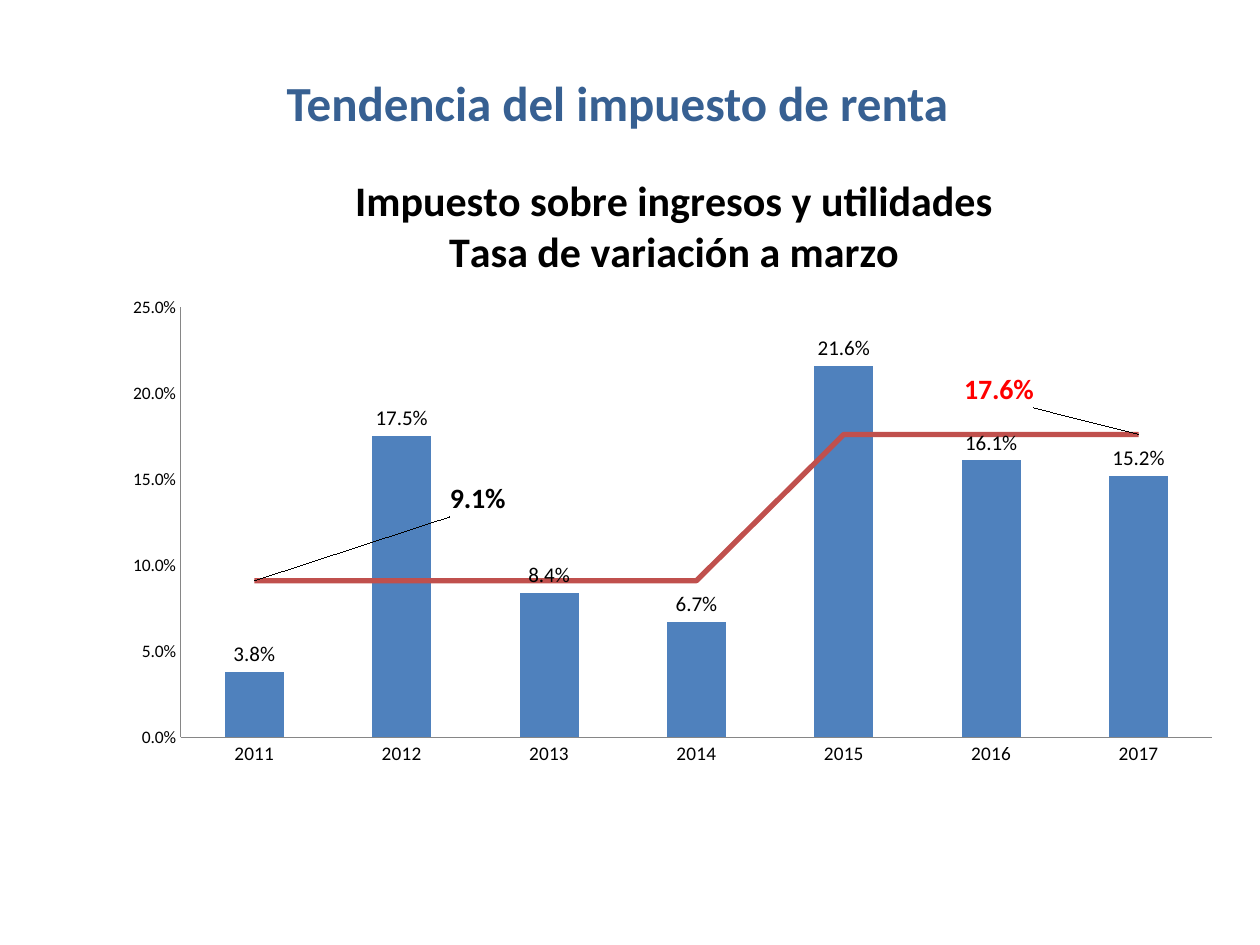
from copy import deepcopy

from pptx import Presentation
from pptx.chart.data import CategoryChartData
from pptx.dml.color import RGBColor
from pptx.enum.chart import (XL_CHART_TYPE, XL_LABEL_POSITION,
                             XL_MARKER_STYLE, XL_TICK_MARK)
from pptx.enum.text import MSO_AUTO_SIZE, PP_ALIGN
from pptx.oxml import parse_xml
from pptx.oxml.ns import nsdecls, qn
from pptx.util import Inches, Pt

COLUMN = XL_CHART_TYPE.COLUMN_CLUSTERED
OUTER = XL_LABEL_POSITION.OUTSIDE_END
RIGHT = XL_LABEL_POSITION.RIGHT
NO_MARK = XL_MARKER_STYLE.NONE
NO_TICK = XL_TICK_MARK.NONE
CENTER = PP_ALIGN.CENTER
GROW = MSO_AUTO_SIZE.SHAPE_TO_FIT_TEXT

BLUE, RED, NAVY = "4F81BD", "C0504D", "376092"
BLACK, GRAY, ALERT = "000000", "868686", "FF0000"
PERCENT = "0.0%"

YEARS = [str(year) for year in range(2011, 2018)]
RATES = [0.038, 0.175, 0.084, 0.067, 0.216, 0.161, 0.152]
MEANS = [0.091] * 4 + [0.176] * 3
# Point, colour, and label shift as shares of the chart
NOTES = [(0, BLACK, 0.17, -0.13), (6, ALERT, -0.16, -0.07)]

LEADERS = (
    f'<c:extLst {nsdecls("c")}><c:ext uri="{{CE6537A1-D6FC-4f65-9D91-7224C49458BB}}" '
    'xmlns:c15="http://schemas.microsoft.com/office/drawing/2012/chart">'
    '<c15:showLeaderLines val="1"/></c:ext></c:extLst>')


def color(code):
    return RGBColor.from_string(code)


def layout(x, y, extra=""):
    return parse_xml(
        f'<c:layout {nsdecls("c")}><c:manualLayout>{extra}'
        f'<c:x val="{x}"/><c:y val="{y}"/></c:manualLayout></c:layout>')


class Page:
    """Keeps the style and the current slide; places are shares of its size."""

    def __init__(self, deck, face="Calibri"):
        self.deck, self.face = deck, face
        self.slide = deck.slides.add_slide(deck.slide_layouts[6])

    def box(self, x, y, w, h):
        wide, high = self.deck.slide_width, self.deck.slide_height
        return int(x * wide), int(y * high), int(w * wide), int(h * high)

    def style(self, font, size, code=BLACK, bold=False):
        font.name, font.size, font.bold = self.face, Pt(size), bold
        font.color.rgb = color(code)

    def text(self, words, place, size, code):
        frame = self.slide.shapes.add_textbox(*self.box(*place)).text_frame
        frame.word_wrap, frame.auto_size = True, GROW
        para = frame.paragraphs[0]
        para.text, para.alignment = words, CENTER
        self.style(para.font, size, code, True)

    def chart(self, place, title):
        data = CategoryChartData(number_format=PERCENT)
        data.categories = YEARS
        data.add_series("Series 1", RATES)
        data.add_series("Series 2", MEANS)
        chart = self.slide.shapes.add_chart(
            COLUMN, *self.box(*place), data).chart
        self.style(chart.font, 10)
        chart.has_legend = False
        chart.has_title = True
        frame = chart.chart_title.text_frame
        frame.text = title
        for para in frame.paragraphs:
            self.style(para.font, 24, bold=True)
        chart.chart_title.include_in_layout = False
        self.axis(chart.category_axis, 11)
        self.axis(chart.value_axis, 10)
        scale = chart.value_axis
        scale.minimum_scale, scale.maximum_scale = 0, 0.25
        scale.major_unit = 0.05
        scale.tick_labels.number_format = PERCENT
        scale.tick_labels.number_format_is_linked = False
        self.bars(chart.plots[0])
        self.trend(chart)
        return chart

    def axis(self, axis, size):
        axis.has_major_gridlines = False
        axis.major_tick_mark = axis.minor_tick_mark = NO_TICK
        axis.format.line.color.rgb = color(GRAY)
        self.style(axis.tick_labels.font, size)

    def bars(self, plot):
        plot.gap_width, plot.vary_by_categories = 150, False
        bars = plot.series[0]
        bars.format.fill.solid()
        bars.format.fill.fore_color.rgb = color(BLUE)
        tags = bars.data_labels
        tags.show_value, tags.position = True, OUTER
        self.style(tags.font, 12)

    def trend(self, chart):
        # Move the second series to a line plot on the same axes
        group = chart.plots[0]._element
        ser = group.findall(qn("c:ser"))[1]
        for flag in ser.findall(qn("c:invertIfNegative")):
            ser.remove(flag)
        line = parse_xml(
            f'<c:lineChart {nsdecls("c")}><c:grouping val="standard"/>'
            '<c:varyColors val="0"/><c:marker val="1"/></c:lineChart>')
        line.insert(2, ser)
        for axis in group.findall(qn("c:axId")):
            line.append(deepcopy(axis))
        group.addnext(line)

        means = chart.plots[1].series[0]
        means.smooth, means.marker.style = False, NO_MARK
        means.format.line.color.rgb = color(RED)
        means.format.line.width = Pt(3)
        # Label two points, each tied to its place by a leader line
        means.data_labels.show_value = False
        tags = ser.find(qn("c:dLbls"))
        for index, code, x, y in NOTES:
            tag = means.points[index].data_label
            self.style(tag.font, 16, code, True)
            tag.position = RIGHT
            tags.findall(qn("c:dLbl"))[-1].insert(1, layout(x, y))
        tags.append(parse_xml(LEADERS))

    def frame(self, chart, x, y, w, h):
        """Set the inner plot area as shares of the chart."""
        area = chart.plots[0]._element.getparent()
        for old in area.findall(qn("c:layout")):
            area.remove(old)
        spot = layout(x, y, '<c:layoutTarget val="inner"/>'
                      '<c:xMode val="edge"/><c:yMode val="edge"/>')
        for name, share in (("w", w), ("h", h)):
            spot[0].append(parse_xml(
                f'<c:{name} {nsdecls("c")} val="{share}"/>'))
        area.insert(0, spot)


def main():
    deck = Presentation()
    deck.slide_width, deck.slide_height = Inches(10), Inches(7.5)
    page = Page(deck)
    # Bars by year with the mean of each period
    chart = page.chart(
        (0.09, 0.16, 0.89, 0.66),
        "Impuesto sobre ingresos y utilidades\nTasa de variación a marzo")
    page.frame(chart, 0.06, 0.25, 0.92, 0.69)
    # Slide heading
    page.text("Tendencia del impuesto de renta",
              (0.02, 0.07, 0.94, 0.08), 28, NAVY)
    deck.save("out.pptx")


if __name__ == "__main__":
    main()
